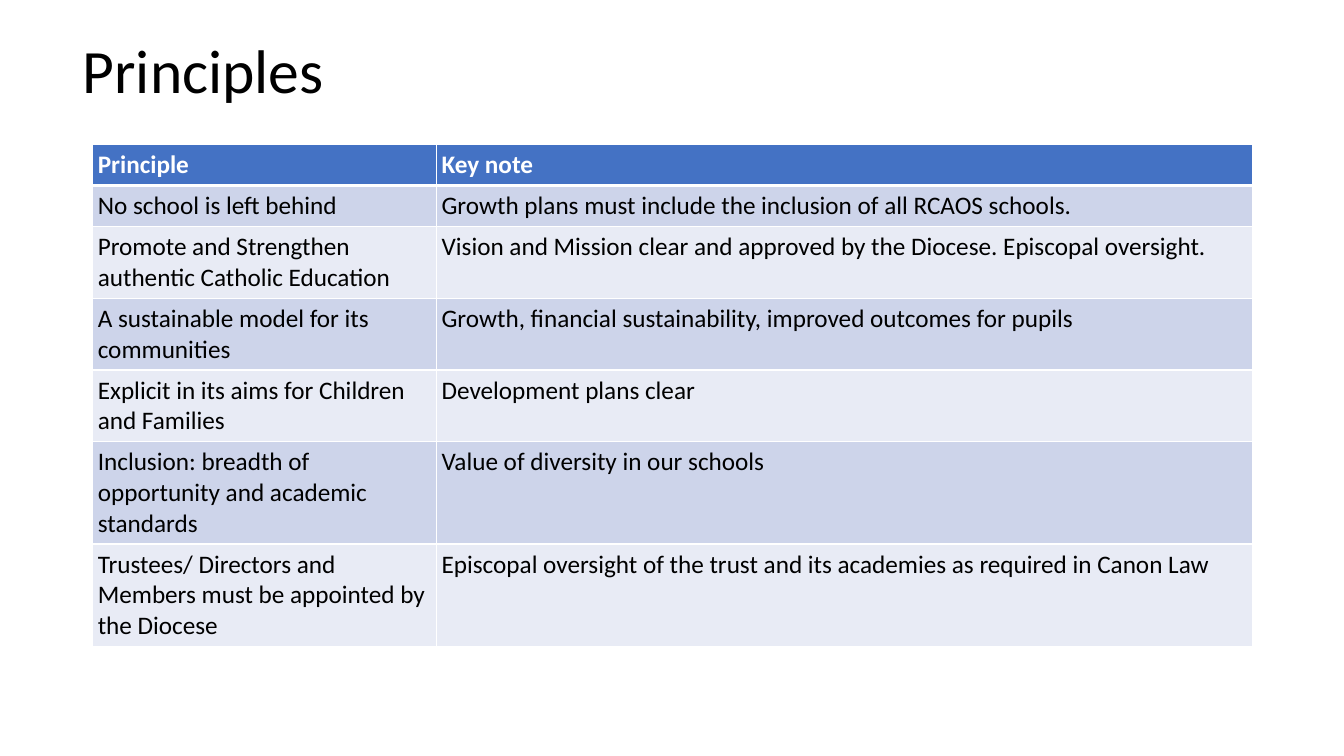
from lxml import etree
from pptx import Presentation
from pptx.dml.color import RGBColor
from pptx.enum.text import MSO_ANCHOR, MSO_AUTO_SIZE, PP_ALIGN
from pptx.oxml.ns import qn
from pptx.util import Pt

PX = 9144  # EMU; 100 px to the inch
LEFT, MIDDLE, TOP = PP_ALIGN.LEFT, MSO_ANCHOR.MIDDLE, MSO_ANCHOR.TOP
NO_AUTOFIT = MSO_AUTO_SIZE.NONE
TITLE_ONLY = 5

THEME = {
    "font": "Calibri",
    "title_size": 44,
    "table_size": 18,
    "text": "000000",
    "white": "FFFFFF",
    "header": "4472C4",
    "bands": ("CDD4EA", "E8EBF5"),
}
INSET = 5 * PX
ROW_HEIGHT = 41 * PX
COLUMN_WIDTHS = (341, 809)
ROWS = (
    ("Principle", "Key note"),
    ("No school is left behind",
     "Growth plans must include the inclusion of all RCAOS schools."),
    ("Promote and Strengthen authentic Catholic Education",
     "Vision and Mission clear and approved by the Diocese. Episcopal oversight."),
    ("A sustainable model for its communities",
     "Growth, financial sustainability, improved outcomes for pupils"),
    ("Explicit in its aims for Children and Families",
     "Development plans clear"),
    ("Inclusion: breadth of opportunity and academic standards",
     "Value of diversity in our schools"),
    ("Trustees/ Directors and Members must be appointed by the Diocese",
     "Episcopal oversight of the trust and its academies as required in Canon Law"),
)


def write_text(tf, text, *, size, color=THEME["text"], bold=False, spacing=None):
    p = tf.paragraphs[0]
    p.alignment = LEFT
    if spacing:
        p.line_spacing = spacing
    r = p.add_run()
    r.text = text
    r.font.name = THEME["font"]
    r.font.size = Pt(size)
    r.font.bold = bold
    r.font.color.rgb = RGBColor.from_string(color)


def add_border(cell, side, width):
    """Draw one white cell edge; side is L, R, T or B, in that order."""
    ln = etree.SubElement(cell._tc.get_or_add_tcPr(), qn(f"a:ln{side}"), w=str(Pt(width)))
    fill = etree.SubElement(ln, qn("a:solidFill"))
    etree.SubElement(fill, qn("a:srgbClr"), val=THEME["white"])


prs = Presentation()
prs.slide_width, prs.slide_height = 1333 * PX, 750 * PX
s = prs.slides.add_slide(prs.slide_layouts[TITLE_ONLY])

# Title
title = s.shapes.title
title.left, title.top, title.width, title.height = 77 * PX, 0, 1150 * PX, 145 * PX
tf = title.text_frame
tf.auto_size = NO_AUTOFIT
tf.word_wrap = True
tf.vertical_anchor = MIDDLE
tf.margin_left = tf.margin_right = tf.margin_top = tf.margin_bottom = INSET
write_text(tf, "Principles", size=THEME["title_size"], spacing=0.9)

# Principles table: rows grow to fit their text
frame = s.shapes.add_table(len(ROWS), len(COLUMN_WIDTHS), 92 * PX, 143 * PX,
                           sum(COLUMN_WIDTHS) * PX, ROW_HEIGHT * len(ROWS))
table = frame.table
for column, width in zip(table.columns, COLUMN_WIDTHS):
    column.width = width * PX

for i, texts in enumerate(ROWS):
    is_header = i == 0
    table.rows[i].height = ROW_HEIGHT
    fill_color = THEME["header"] if is_header else THEME["bands"][(i - 1) % 2]
    text_color = THEME["white"] if is_header else THEME["text"]
    edges = {"L": 1, "R": 1, "T": 3 if i == 1 else 1, "B": 3 if is_header else 1}
    for j, text in enumerate(texts):
        cell = table.cell(i, j)
        cell.margin_left = cell.margin_right = INSET
        cell.margin_top = cell.margin_bottom = INSET
        cell.vertical_anchor = TOP
        for side, width in edges.items():
            add_border(cell, side, width)
        cell.fill.solid()
        cell.fill.fore_color.rgb = RGBColor.from_string(fill_color)
        write_text(cell.text_frame, text, size=THEME["table_size"],
                   color=text_color, bold=is_header)
frame.height = 491 * PX

prs.save("out.pptx")
